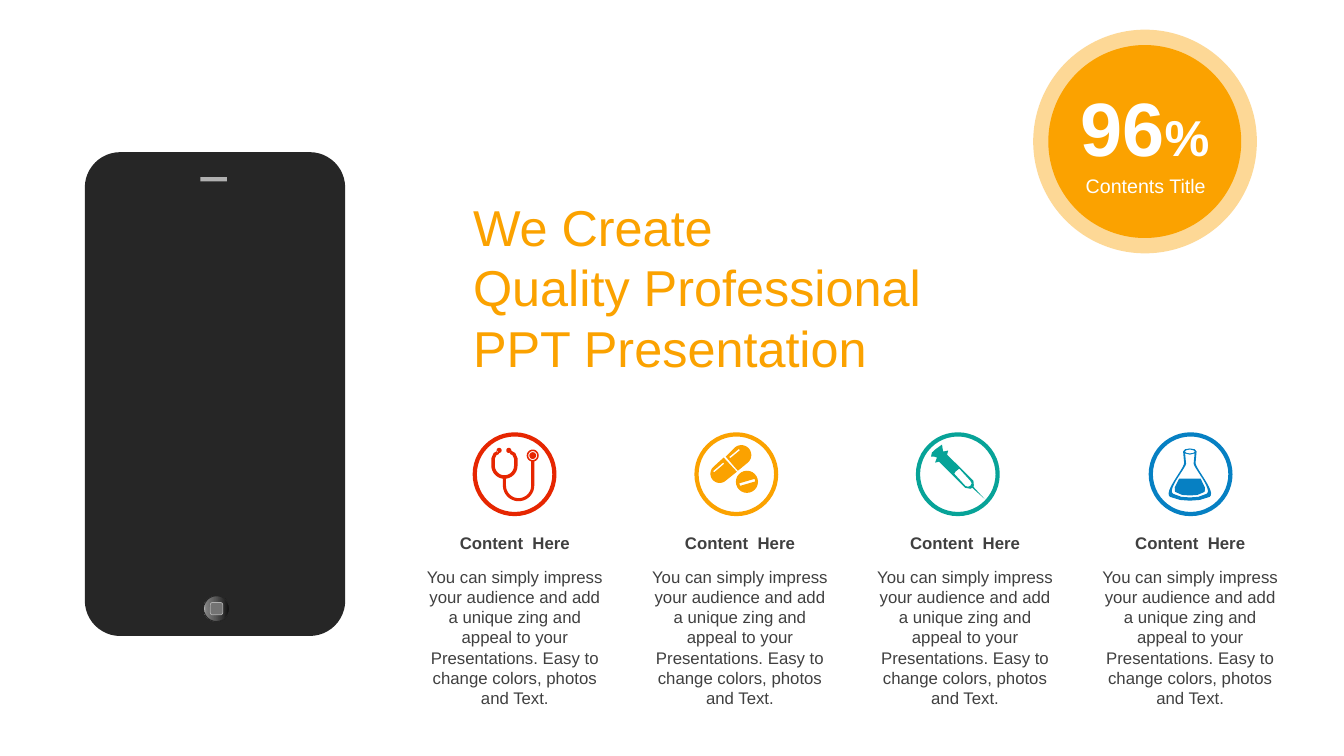
import copy
import math
from dataclasses import dataclass

import pptx
import pptx.dml.color
import pptx.enum.shapes
import pptx.enum.text
import pptx.oxml
import pptx.oxml.ns
import pptx.util

Pt = pptx.util.Pt
RGB = pptx.dml.color.RGBColor
KIND = pptx.enum.shapes.MSO_SHAPE
ALIGN = pptx.enum.text.PP_ALIGN
ANCHOR = pptx.enum.text.MSO_ANCHOR
qn = pptx.oxml.ns.qn
Contour = list[tuple[float, float]]

ORANGE, RED = RGB(0xFB, 0xA2, 0x00), RGB(0xE6, 0x26, 0x01)
TEAL, BLUE = RGB(0x07, 0xA3, 0x98), RGB(0x06, 0x80, 0xC3)
WHITE, TEXT_GREY = RGB(0xFF, 0xFF, 0xFF), RGB(0x40, 0x40, 0x40)
PHONE_BLACK, BUTTON_GREY = RGB(0x26, 0x26, 0x26), RGB(0x73, 0x73, 0x73)
SILVER = RGB(0xB0, 0xB0, 0xB0)
BUTTON_STOPS = [(0, "0F0F0F"), (0.56, "595959"), (0.91, "808080"), (1, "BFBFBF")]

FONT = "Arial"
BADGE_TOP, BADGE_SIZE = 310.3, 56.9
COLUMN_LEFT, COLUMN_STEP, COLUMN_WIDTH = 297.3, 160.8, 141
HEADING = "Content  Here"
BODY = ("You can simply impress your audience and add a unique zing and appeal "
        "to your Presentations. Easy to change colors, photos and Text.")


@dataclass
class Run:
    text: str
    size: float
    color: RGB
    bold: bool = False


@dataclass
class Column:
    badge_left: float
    color: RGB
    icon: list[Contour]  # points measured from the badge centre


# Outline helpers
def arc(x: float, y: float, rx: float, start: float = 0, end: float = 360,
        ry: float | None = None) -> Contour:
    steps = 24
    angles = [math.radians(start + (end - start) * i / steps) for i in range(steps + 1)]
    return [(x + rx * math.cos(a), y + (ry or rx) * math.sin(a)) for a in angles]


def curve(*controls: tuple[float, float]) -> Contour:
    weights = [((1 - t) ** 3, 3 * t * (1 - t) ** 2, 3 * t * t * (1 - t), t ** 3)
               for t in (i / 12 for i in range(13))]
    return [(sum(w * p[0] for w, p in zip(ws, controls)),
             sum(w * p[1] for w, p in zip(ws, controls))) for ws in weights]


def mirrored(half: Contour, axis: float) -> Contour:
    return half + [(2 * axis - x, y) for x, y in reversed(half)]


def ribbon(line: Contour, width: float) -> Contour:
    one_side, other_side = [], []
    for i, (x, y) in enumerate(line):
        before, after = line[max(i - 1, 0)], line[min(i + 1, len(line) - 1)]
        dx, dy = after[0] - before[0], after[1] - before[1]
        k = width / 2 / math.hypot(dx, dy)
        one_side.append((x - dy * k, y + dx * k))
        other_side.append((x + dy * k, y - dx * k))
    return one_side + other_side[::-1]


# Icons
YOKE = [(-11.6, -15.6), (-14, -14.3), (-15.3, -11.2)] + arc(-7.2, -6.1, 8.1, 180, 90)
STETHOSCOPE = [
    ribbon(mirrored(YOKE[:-1], -7.2), 2.5),
    ribbon([(-7.2, 3.4)] + arc(2.9, 8.1, 10.1, 180, 0) + [(13, -9.2)], 2.2),
    *[arc(x, -17, 1.8) for x in (-11, -4.1)],
    *[arc(13, -13.3, r) for r in (4.3, 3.2, 2.4)],
]
PILLS = [
    arc(-11.9, -0.4, 6.6, 49, 229) + [(-9, -11.9), (0.4, -1.8)],
    arc(3.6, -13.7, 7.1, 229, 409) + [(1.1, -2.5), (-7.6, -12.6)],
    ribbon([(-16.2, -1.8), (-9, -7.9)], 1.2),
    ribbon([(-4.7, -11.9), (2.2, -17.6)], 1.2),
    arc(7.6, 5.4, 7.9),
    ribbon([(2.4, 7.4), (13.3, 4.2)], 1.9),
]
SYRINGE = [
    [(-11.2, -21.2), (-10.8, -18.4), (-10.4, -16.2), (-6.8, -16.9), (-7.6, -14),
     (11.2, 4.7), (11.5, 7.9), (11.2, 9), (19.1, 17.6), (10.4, 9.7), (9, 10.4),
     (5.4, 9.7), (-13.3, -9), (-16.2, -8.3), (-14.8, -11.9), (-16.9, -12.6),
     (-19.1, -12.6), (-18.4, -15.5), (-16.2, -17.6)],
    [(1.1, -4), (-1.5, -2), (-2.5, -0.4), (5.4, 8.3), (7.2, 9), (9, 8.3),
     (10, 6.5), (9, 4.7)],
]
FLASK = [
    mirrored([(-0.5, -18.4), (-4, -17.8), (-5.3, -16.2)]
             + curve((-4.6, -8.3), (-3.9, -4.7), (-19.7, 12.6), (-14.7, 16.2))
             + [(-7.5, 18.4), (-0.5, 18.9)], -0.5),
    mirrored([(-0.5, -14), (-3.9, -14.8)]
             + curve((-3.2, -7.6), (-3.2, -4.7), (-17, 11), (-12.5, 14))
             + [(-6.5, 16.2), (-0.5, 16.6)], -0.5),
    arc(-0.5, -16.2, 3.4, ry=1.3),
    mirrored([(-8.2, 3.2), (-11.3, 9.5), (-11.1, 12.6), (-6, 14.8), (-0.5, 15.2)], -0.5),
]
COLUMNS = [Column(339.1, RED, STETHOSCOPE), Column(497.5, ORANGE, PILLS),
           Column(655.7, TEAL, SYRINGE), Column(822, BLUE, FLASK)]


# Drawing helpers
def add_shape(slide, kind, left: float, top: float, width: float, height: float,
              fill: RGB, line: RGB | None = None, line_width: float = 0):
    shape = slide.shapes.add_shape(kind, Pt(left), Pt(top), Pt(width), Pt(height))
    shape.shadow.inherit = False
    shape.fill.solid()
    shape.fill.fore_color.rgb = fill
    if line is None:
        shape.line.fill.background()
    else:
        shape.line.color.rgb = line
        shape.line.width = Pt(line_width)
    return shape


def add_text(slide, left: float, top: float, width: float, height: float,
             paragraphs: list[list[Run]], align=ALIGN.CENTER, anchor=ANCHOR.TOP,
             insets: tuple[float, float] = (7.2, 3.6), pitch: float | None = None) -> None:
    frame = slide.shapes.add_textbox(Pt(left), Pt(top), Pt(width), Pt(height)).text_frame
    frame.word_wrap = True
    frame.auto_size = pptx.enum.text.MSO_AUTO_SIZE.SHAPE_TO_FIT_TEXT
    frame.vertical_anchor = anchor
    frame.margin_left = frame.margin_right = Pt(insets[0])
    frame.margin_top = frame.margin_bottom = Pt(insets[1])
    for i, runs in enumerate(paragraphs):
        paragraph = frame.add_paragraph() if i else frame.paragraphs[0]
        paragraph.alignment = align
        if pitch:
            paragraph.line_spacing = Pt(pitch)
        for item in runs:
            run = paragraph.add_run()
            run.text = item.text
            run.font.name, run.font.size, run.font.bold = FONT, Pt(item.size), item.bold
            run.font.color.rgb = item.color


def add_icon(slide, x: float, y: float, contours: list[Contour], color: RGB) -> None:
    placed = [[(Pt(x + px), Pt(y + py)) for px, py in c] for c in contours]
    builder = slide.shapes.build_freeform(*placed[0][0])
    for i, points in enumerate(placed):
        if i:
            builder.move_to(*points[0])
        builder.add_line_segments(points[1:], close=True)
    icon = builder.convert_to_shape()
    icon.shadow.inherit = False
    icon.fill.solid()
    icon.fill.fore_color.rgb = color
    icon.line.fill.background()


def add_phone(slide) -> None:
    body = add_shape(slide, KIND.ROUNDED_RECTANGLE, 60.6, 108.7, 186, 345.6, PHONE_BLACK)
    body.adjustments[0] = 0.136
    add_shape(slide, KIND.RECTANGLE, 143.2, 126.6, 18.9, 3, SILVER)
    button = add_shape(slide, KIND.OVAL, 145.4, 425.5, 18.5, 18.5, PHONE_BLACK, PHONE_BLACK)
    button.fill.gradient()
    button.fill.gradient_angle = 180
    stops = button.fill._fill._gradFill.find(qn("a:gsLst"))
    for stop in list(stops)[1:]:
        stops.remove(stop)
    template = stops[0]
    stops.remove(template)
    for position, color in BUTTON_STOPS:
        stop = copy.deepcopy(template)
        stop.set("pos", str(round(position * 100000)))
        stop.remove(stop[0])
        stop.append(stop.makeelement(qn("a:srgbClr"), {"val": color}))
        stops.append(stop)
    add_shape(slide, KIND.ROUNDED_RECTANGLE, 150.3, 430.4, 8.8, 8.8, BUTTON_GREY, SILVER, 0.5)


def add_score(slide) -> None:
    halo = add_shape(slide, KIND.OVAL, 738, 21.2, 159.8, 159.8, ORANGE)
    color = halo.fill._fill._solidFill.find(qn("a:srgbClr"))
    color.append(color.makeelement(qn("a:alpha"), {"val": "41000"}))
    add_shape(slide, KIND.OVAL, 748.8, 32.2, 137.8, 137.8, ORANGE)
    add_text(slide, 761, 57.6, 113.8, 65.5, [[Run("96", 54, WHITE, True), Run("%", 36, WHITE, True)]],
             anchor=ANCHOR.MIDDLE, insets=(0, 0))
    add_text(slide, 762.3, 120.7, 112.3, 24.5, [[Run("Contents Title", 14, WHITE)]])


def main() -> None:
    deck = pptx.Presentation()
    deck.slide_width, deck.slide_height = Pt(960), Pt(540)
    slide = deck.slides.add_slide(deck.slide_layouts[6])
    add_phone(slide)
    add_score(slide)
    # Headline
    headline = ["We Create", "Quality Professional", "PPT Presentation"]
    add_text(slide, 335, 139.2, 340.6, 131, [[Run(line, 36, ORANGE)] for line in headline],
             ALIGN.LEFT, ANCHOR.MIDDLE, (2.9, 0), 43.4)
    # Four content columns
    for i, column in enumerate(COLUMNS):
        left = COLUMN_LEFT + i * COLUMN_STEP
        add_shape(slide, KIND.OVAL, column.badge_left, BADGE_TOP, BADGE_SIZE, BADGE_SIZE,
                  WHITE, column.color, 3)
        add_icon(slide, column.badge_left + BADGE_SIZE / 2, BADGE_TOP + BADGE_SIZE / 2,
                 column.icon, column.color)
        add_text(slide, left, 377, COLUMN_WIDTH, 21.6, [[Run(HEADING, 12, TEXT_GREY, True)]])
        add_text(slide, left, 401.2, COLUMN_WIDTH, 108.7, [[Run(BODY, 12, TEXT_GREY)]], pitch=14.4)
    deck.save("out.pptx")


if __name__ == "__main__":
    main()
